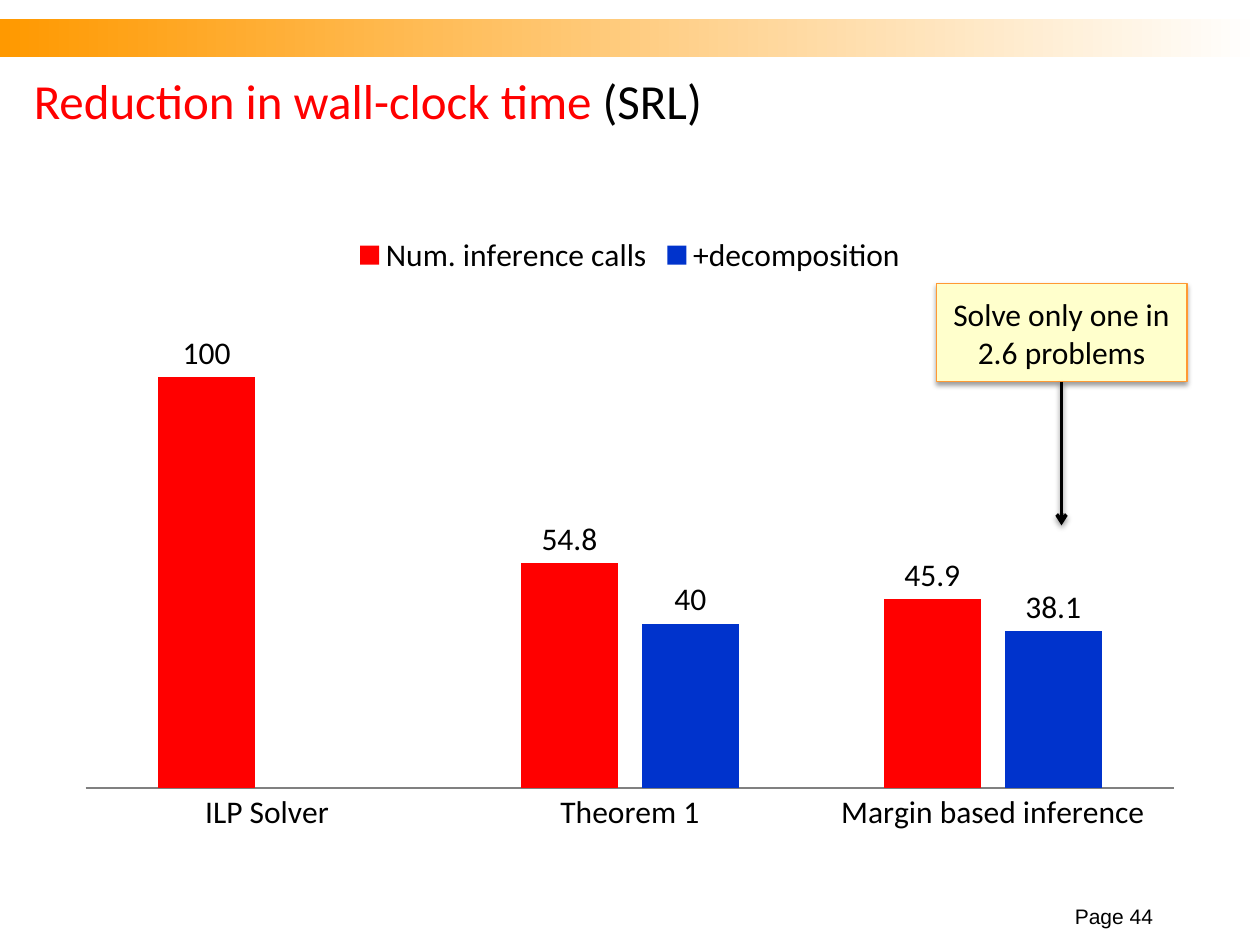
from lxml import etree
from pptx import Presentation
from pptx.chart.data import CategoryChartData
from pptx.dml.color import RGBColor
from pptx.enum.chart import XL_CHART_TYPE, XL_LABEL_POSITION, XL_LEGEND_POSITION, XL_TICK_MARK
from pptx.enum.shapes import MSO_CONNECTOR, MSO_SHAPE
from pptx.enum.text import MSO_ANCHOR, PP_ALIGN
from pptx.oxml import parse_xml
from pptx.oxml.ns import nsdecls, qn
from pptx.util import Inches, Pt

COLUMNS = XL_CHART_TYPE.COLUMN_CLUSTERED
OUTSIDE = XL_LABEL_POSITION.OUTSIDE_END
TOP_LEGEND = XL_LEGEND_POSITION.TOP
NO_TICKS = XL_TICK_MARK.NONE
RECT = MSO_SHAPE.RECTANGLE
STRAIGHT = MSO_CONNECTOR.STRAIGHT
MIDDLE, BOTTOM = MSO_ANCHOR.MIDDLE, MSO_ANCHOR.BOTTOM
LEFT, CENTER, RIGHT = PP_ALIGN.LEFT, PP_ALIGN.CENTER, PP_ALIGN.RIGHT

COLORS = {"black": "000000", "white": "FFFFFF", "red": "FF0000", "blue": "0033CC",
          "orange": "FF9900", "note": "FFFFCC", "border": "FF9933", "axis": "808080"}
WIDTH, HEIGHT = Inches(10), Inches(7.5)
COLS, ROWS = 100, 75


def rgb(name):
    return RGBColor.from_string(COLORS[name])


class Deck:
    """Holds the style and the current slide; places are in grid columns and rows."""

    def __init__(self, font="Calibri", size=18):
        self.font, self.size = font, size
        self.prs = Presentation()
        self.prs.slide_width, self.prs.slide_height = WIDTH, HEIGHT
        self.s = self.prs.slides.add_slide(self.prs.slide_layouts[6])

    def grid(self, x, y, *size):
        """Turn a place, with or without a size, into slide lengths."""
        return [round(v * unit) for v, unit in
                zip((x, y, *size), (WIDTH / COLS, HEIGHT / ROWS) * 2)]

    def set_font(self, font, size=None, name=None, color="black"):
        font.size, font.name = Pt(size or self.size), name or self.font
        font.color.rgb = rgb(color)

    def fill_text(self, sp, runs, align, anchor, size=None, name=None):
        tf = sp.text_frame
        tf.word_wrap, tf.vertical_anchor = True, anchor
        p = tf.paragraphs[0]
        p.alignment = align
        self.set_font(p.font, size, name)
        for text, color in runs:
            r = p.add_run()
            r.text = text
            r.font.color.rgb = rgb(color)

    def text(self, at, runs, align=LEFT, anchor=MIDDLE, size=None, name=None):
        sp = self.s.shapes.add_textbox(*self.grid(*at))
        self.fill_text(sp, runs, align, anchor, size, name)

    def band(self, at, start, end):
        sp = self.s.shapes.add_shape(RECT, *self.grid(*at))
        sp.shadow.inherit = False
        sp.line.fill.background()
        sp.fill.gradient()
        sp.fill.gradient_angle = 0
        for stop, color, position in zip(sp.fill.gradient_stops, (start, end), (0, 1)):
            stop.color.rgb, stop.position = rgb(color), position

    def drop_shadow(self, sp):
        sp._element.spPr.append(parse_xml(
            f'<a:effectLst {nsdecls("a")}><a:outerShdw blurRad="{Pt(3.1)}" dist="{Pt(1.6)}" '
            'dir="5400000" rotWithShape="0"><a:srgbClr val="000000"><a:alpha val="38000"/>'
            '</a:srgbClr></a:outerShdw></a:effectLst>'))

    def note(self, at, text):
        sp = self.s.shapes.add_shape(RECT, *self.grid(*at))
        sp.fill.solid()
        sp.fill.fore_color.rgb = rgb("note")
        sp.line.color.rgb, sp.line.width = rgb("border"), Pt(0.75)
        self.drop_shadow(sp)
        self.fill_text(sp, [(text, "black")], CENTER, MIDDLE)

    def arrow(self, start, end):
        line = self.s.shapes.add_connector(STRAIGHT, *self.grid(*start), *self.grid(*end))
        line.line.color.rgb, line.line.width = rgb("black"), Pt(2)
        ln = line._element.spPr.find(qn("a:ln"))
        etree.SubElement(ln, qn("a:tailEnd"), type="arrow")
        self.drop_shadow(line)

    def column_chart(self, at, cats, series, top, plot):
        """series holds (name, colour, values); plot holds shares of the chart's size."""
        data = CategoryChartData()
        data.categories = cats
        for name, _, values in series:
            data.add_series(name, values)
        chart = self.s.shapes.add_chart(COLUMNS, *self.grid(*at), data).chart
        self.set_font(chart.font)
        chart.has_title = False
        chart.has_legend = True
        chart.legend.position = TOP_LEGEND
        chart.legend.include_in_layout = False

        val_axis = chart.value_axis
        val_axis.minimum_scale, val_axis.maximum_scale = 0, top
        val_axis.has_major_gridlines = val_axis.visible = False
        cat_axis = chart.category_axis
        cat_axis.major_tick_mark = cat_axis.minor_tick_mark = NO_TICKS
        cat_axis.format.line.color.rgb = rgb("axis")
        cat_axis.format.line.width = Pt(0.75)

        bars = chart.plots[0]
        bars.gap_width, bars.overlap, bars.vary_by_categories = 150, -25, False
        bars.has_data_labels = True
        bars.data_labels.show_value = True
        bars.data_labels.position = OUTSIDE
        for bar, (_, color, _) in zip(bars.series, series):
            bar.format.fill.solid()
            bar.format.fill.fore_color.rgb = rgb(color)
        self.place_plot(chart, plot)

    def place_plot(self, chart, plot):
        area = chart._chartSpace.chart.plotArea
        for old in area.findall(qn("c:layout")):
            area.remove(old)
        sizes = "".join(f'<c:{tag} val="{v}"/>' for tag, v in zip("xywh", plot))
        area.insert(0, parse_xml(
            f'<c:layout {nsdecls("c")}><c:manualLayout><c:layoutTarget val="inner"/>'
            f'<c:xMode val="edge"/><c:yMode val="edge"/>{sizes}</c:manualLayout></c:layout>'))


def main():
    deck = Deck()
    deck.band((0, 1.5, COLS, 3), "orange", "white")
    deck.text((1.7, 5, 90, 5.8), [("Reduction in wall-clock time ", "red"), ("(SRL)", "black")],
              size=28)
    deck.column_chart(
        (5, 17.5, 90, 49.5), ["ILP Solver", "Theorem 1", "Margin based inference"],
        [("Num. inference calls", "red", (100, 54.8, 45.9)),
         ("+decomposition", "blue", (None, 40, 38.1))],
        top=120, plot=(0.02, 0.12, 0.96, 0.79))
    note_x, note_y, note_w, note_h = 74.3, 22.5, 19.9, 7.8
    deck.note((note_x, note_y, note_w, note_h), "Solve only one in 2.6 problems")
    middle = note_x + note_w / 2
    deck.arrow((middle, note_y + note_h), (middle, 41.7))
    deck.text((82.5, 71.7, 10, 2.5), [("Page 44", "black")], RIGHT, BOTTOM, 12, "Arial")
    deck.prs.save("out.pptx")


if __name__ == "__main__":
    main()
